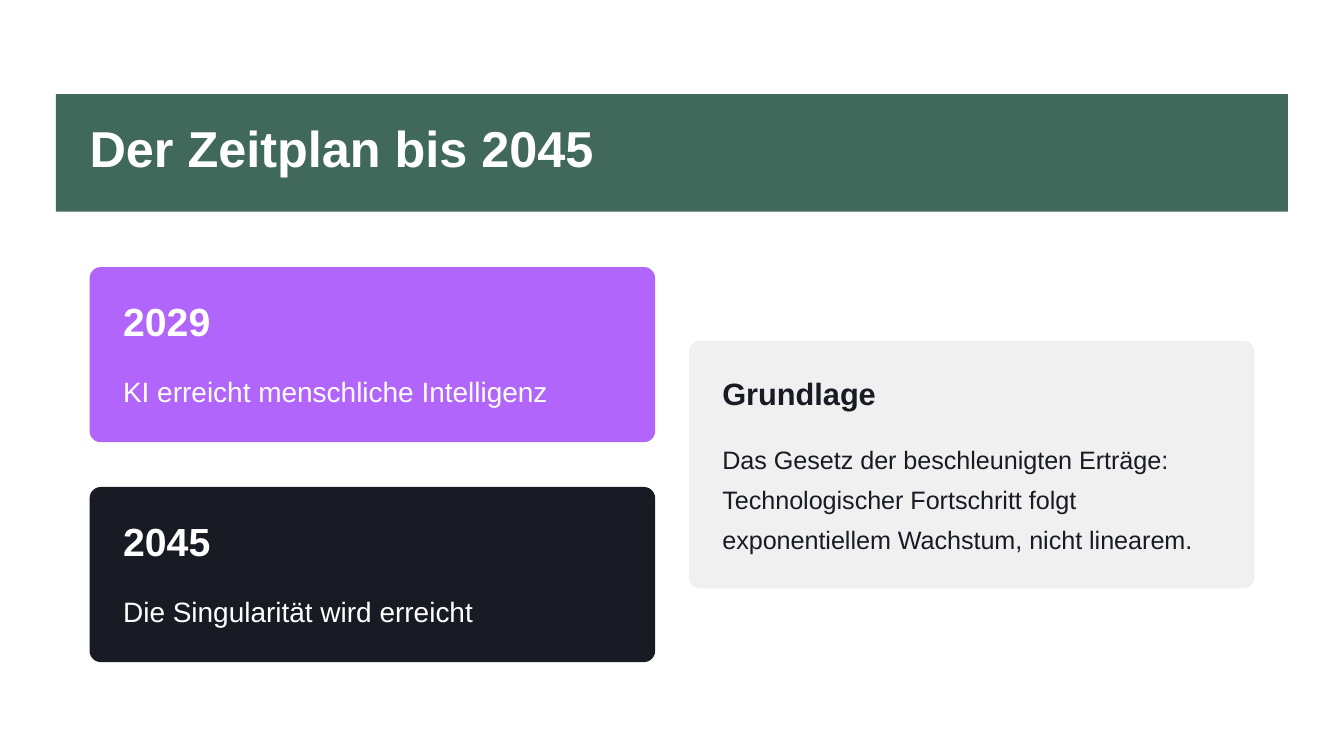
from pptx import Presentation
from pptx.dml.color import RGBColor
from pptx.enum.shapes import MSO_SHAPE
from pptx.util import Inches, Pt

# Grid: 12 units to the inch, 6 points to the unit
UNIT = Inches(1) // 12
POINTS = 6
PADDING = 3
RADIUS = 1
HEADING_GAP = 2
CARD_WIDTH = 50.5

GREEN, PURPLE, DARK = "40695B", "B165FB", "181B24"
LIGHT, WHITE = "F0F0F0", "FFFFFF"


def color(value):
    return RGBColor.from_string(value)


def grid(*values):
    return [round(value * UNIT) for value in values]


def add_text(slide, text, left, top, width, *, size, leading, fill,
             bold=False, lines=1):
    """Place text and return its height in grid units."""
    height = lines * leading / POINTS
    box = slide.shapes.add_textbox(*grid(left, top, width, height))
    frame = box.text_frame
    frame.word_wrap = True
    frame.margin_left = frame.margin_right = 0
    frame.margin_top = frame.margin_bottom = 0
    paragraph = frame.paragraphs[0]
    paragraph.text = text
    paragraph.line_spacing = Pt(leading)
    font = paragraph.font
    font.name, font.size, font.bold = "Arial", Pt(size), bold
    font.color.rgb = color(fill)
    return height


def add_panel(slide, kind, left, top, width, height, fill):
    shape = slide.shapes.add_shape(kind, *grid(left, top, width, height))
    shape.shadow.inherit = False
    shape.fill.solid()
    shape.fill.fore_color.rgb = color(fill)
    shape.line.fill.background()
    return shape


def add_title(slide, text, left, top, width, height):
    add_panel(slide, MSO_SHAPE.RECTANGLE, left, top, width, height, GREEN)
    add_text(slide, text, left + PADDING, top + PADDING, 53.2,
             size=27, leading=27, fill=WHITE, bold=True)


def card_height(heading, body):
    leading = heading["leading"] + body["leading"] * body.get("lines", 1)
    return 2 * PADDING + HEADING_GAP + leading / POINTS


def add_card(slide, title, text, left, top, fill, ink, heading, body,
             heading_width):
    height = card_height(heading, body)
    panel = add_panel(slide, MSO_SHAPE.ROUNDED_RECTANGLE, left, top,
                      CARD_WIDTH, height, fill)
    panel.adjustments[0] = RADIUS / height
    left, top = left + PADDING, top + PADDING
    top += HEADING_GAP + add_text(slide, title, left, top, heading_width,
                                  fill=ink, bold=True, **heading)
    add_text(slide, text, left, top, 45.4, fill=ink, **body)


def main():
    presentation = Presentation()
    presentation.slide_width = Inches(10)
    presentation.slide_height = Inches(5.625)
    slide = presentation.slides.add_slide(presentation.slide_layouts[6])
    slide.background.fill.solid()
    slide.background.fill.fore_color.rgb = color(WHITE)

    # Title band
    add_title(slide, "Der Zeitplan bis 2045", 5, 8.4, 110, 10.5)

    # Milestones in the left column
    year = dict(size=21, leading=23.3)
    event = dict(size=15, leading=22.5)
    first_top, card_gap = 23.85, 4
    step = card_height(year, event) + card_gap
    milestones = [
        ("2029", "KI erreicht menschliche Intelligenz", PURPLE),
        ("2045", "Die Singularität wird erreicht", DARK),
    ]
    for row, (title, text, fill) in enumerate(milestones):
        add_card(slide, title, text, 8, first_top + row * step, fill, WHITE,
                 year, event, 22.8)

    # Rationale, centred beside the milestones
    heading = dict(size=16.5, leading=19.8)
    body = dict(size=13.5, leading=21.6, lines=3)
    column_height = len(milestones) * step - card_gap
    top = first_top + (column_height - card_height(heading, body)) / 2
    add_card(slide, "Grundlage",
             "Das Gesetz der beschleunigten Erträge: Technologischer "
             "Fortschritt folgt exponentiellem Wachstum, nicht linearem.",
             61.5, top, LIGHT, DARK, heading, body, 45.4)

    presentation.save("out.pptx")


if __name__ == "__main__":
    main()
